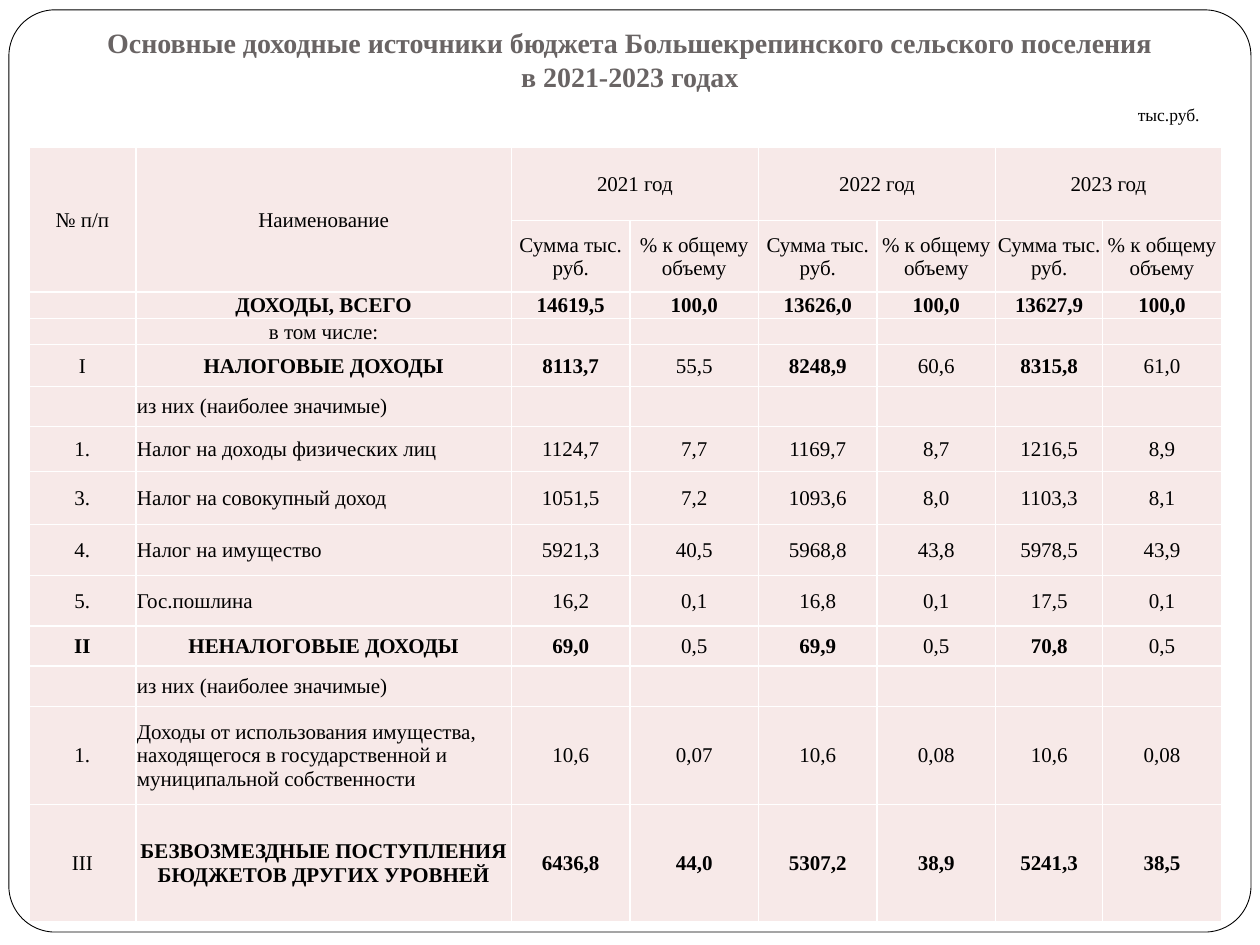
from lxml.etree import SubElement
from pptx import Presentation
from pptx.dml.color import RGBColor
from pptx.enum.shapes import MSO_SHAPE as SHAPE
from pptx.enum.text import MSO_ANCHOR as ANCHOR, MSO_AUTO_SIZE as AUTO, PP_ALIGN as ALIGN
from pptx.oxml.ns import qn
from pptx.util import Cm, Pt

COLORS = {"paper": "FFFFFF", "ink": "000000", "title": "696464", "cell": "F7E9E8"}
FONT = "Times New Roman"
C, L = ALIGN.CENTER, ALIGN.LEFT
YEARS = ["2021 год", "2022 год", "2023 год"]
COL_WIDTHS = [2.16, 7.57, 2.39, 2.59, 2.39, 2.39, 2.16, 2.39]
HEADER_HEIGHTS = [1.47, 1.45]
SUMS = {2, 4, 6}
SHARES = {3, 5, 7}

# height, name alignment, bold columns, cell texts
ROWS = [
    (0.48, C, {1} | SUMS | SHARES,
     ["", "ДОХОДЫ, ВСЕГО", "14619,5", "100,0", "13626,0", "100,0", "13627,9", "100,0"]),
    (0.48, C, set(), ["", "в том числе:"]),
    (0.84, C, {1} | SUMS,
     ["I", "НАЛОГОВЫЕ ДОХОДЫ", "8113,7", "55,5", "8248,9", "60,6", "8315,8", "61,0"]),
    (0.81, L, set(), ["", "из них (наиболее значимые)"]),
    (0.91, L, set(),
     ["1.", "Налог на доходы физических лиц", "1124,7", "7,7", "1169,7", "8,7", "1216,5", "8,9"]),
    (1.07, L, set(),
     ["3.", "Налог на совокупный доход", "1051,5", "7,2", "1093,6", "8,0", "1103,3", "8,1"]),
    (1.02, L, set(),
     ["4.", "Налог на имущество", "5921,3", "40,5", "5968,8", "43,8", "5978,5", "43,9"]),
    (1.02, L, set(), ["5.", "Гос.пошлина", "16,2", "0,1", "16,8", "0,1", "17,5", "0,1"]),
    (0.81, C, {0, 1} | SUMS,
     ["II", "НЕНАЛОГОВЫЕ ДОХОДЫ", "69,0", "0,5", "69,9", "0,5", "70,8", "0,5"]),
    (0.81, L, set(), ["", "из них (наиболее значимые)"]),
    (1.98, L, set(),
     ["1.", "Доходы от использования имущества, находящегося в государственной и "
      "муниципальной собственности", "10,6", "0,07", "10,6", "0,08", "10,6", "0,08"]),
    (2.36, C, {1} | SUMS | SHARES,
     ["III", "БЕЗВОЗМЕЗДНЫЕ ПОСТУПЛЕНИЯ БЮДЖЕТОВ ДРУГИХ УРОВНЕЙ",
      "6436,8", "44,0", "5307,2", "38,9", "5241,3", "38,5"]),
]


def rgb(name):
    return RGBColor.from_string(COLORS[name])


def write(tf, text, size=12, bold=False, color="ink", align=C):
    p = tf.paragraphs[0]
    p.alignment = align
    for i, line in enumerate(text.split("\n")):
        if i:
            p.add_line_break()
        if line:
            r = p.add_run()
            r.text = line
            r.font.name, r.font.size, r.font.bold = FONT, Pt(size), bold
            r.font.color.rgb = rgb(color)
    SubElement(p._p, qn("a:endParaRPr"), sz=str(size * 100))


def add_frame(s):
    sp = s.shapes.add_shape(SHAPE.ROUNDED_RECTANGLE, Cm(0.18), Cm(0.2), Cm(25.04), Cm(18.59))
    sp.adjustments[0] = 0.05
    sp.shadow.inherit = False
    sp.fill.solid()
    sp.fill.fore_color.rgb = rgb("paper")
    sp.line.color.rgb = rgb("ink")
    sp.line.width = Pt(0.5)
    s.shapes._spTree.insert(2, sp._element)


def add_title(s, text):
    sp = s.shapes.title
    sp.left, sp.top, sp.width, sp.height = Cm(1.19), Cm(0.79), Cm(23.01), Cm(1.98)
    tf = sp.text_frame
    tf.auto_size = AUTO.NONE
    tf.vertical_anchor = ANCHOR.BOTTOM
    tf.margin_top, tf.margin_bottom = 0, Cm(0.9)
    write(tf, text, size=16, bold=True, color="title")


def add_unit(s, text):
    tf = s.shapes.add_textbox(Cm(20.04), Cm(1.98), Cm(4.39), Cm(0.69)).text_frame
    tf.word_wrap = True
    write(tf, text, size=10, align=ALIGN.RIGHT)


def set_borders(cell):
    tc_pr = cell._tc.get_or_add_tcPr()
    for i, side in enumerate(("lnL", "lnR", "lnT", "lnB")):
        ln = SubElement(tc_pr, qn(f"a:{side}"), w=str(Pt(1)))
        fill = SubElement(ln, qn("a:solidFill"))
        SubElement(fill, qn("a:srgbClr"), val=COLORS["paper"])
        tc_pr.insert(i, ln)


def fill_cell(cell, text="", **fmt):
    cell.fill.solid()
    cell.fill.fore_color.rgb = rgb("cell")
    set_borders(cell)
    cell.vertical_anchor = ANCHOR.MIDDLE
    cell.margin_left = cell.margin_right = cell.margin_top = Cm(0.02)
    cell.margin_bottom = 0
    write(cell.text_frame, text, **fmt)


def add_income_table(s):
    heights = HEADER_HEIGHTS + [row[0] for row in ROWS]
    table = s.shapes.add_table(len(heights), len(COL_WIDTHS), Cm(0.58), Cm(2.97),
                               Cm(sum(COL_WIDTHS)), Cm(sum(heights))).table
    table.first_row = table.horz_banding = False
    for col, width in zip(table.columns, COL_WIDTHS):
        col.width = Cm(width)
    for row, height in zip(table.rows, heights):
        row.height = Cm(height)

    top = ["№ п/п", "Наименование"] + [t for year in YEARS for t in (year, "")]
    sub = ["", ""] + ["Сумма тыс. руб.", "% к общему объему"] * len(YEARS)
    for r, texts in enumerate((top, sub)):
        for c, text in enumerate(texts):
            fill_cell(table.cell(r, c), text)
    for c in (0, 1):
        table.cell(0, c).merge(table.cell(1, c))
    for c in sorted(SUMS):
        table.cell(0, c).merge(table.cell(0, c + 1))

    for r, (_, name_align, bold, texts) in enumerate(ROWS, len(HEADER_HEIGHTS)):
        for c in range(len(COL_WIDTHS)):
            fill_cell(table.cell(r, c), texts[c] if c < len(texts) else "",
                      bold=c in bold, align=name_align if c == 1 else C)


def main():
    prs = Presentation()
    prs.slide_width, prs.slide_height = Cm(25.4), Cm(19.05)
    s = prs.slides.add_slide(prs.slide_layouts[5])
    add_frame(s)
    add_title(s, "Основные доходные источники бюджета Большекрепинского сельского поселения\n"
                 "в 2021-2023 годах")
    add_unit(s, "тыс.руб.")
    add_income_table(s)
    prs.save("out.pptx")


if __name__ == "__main__":
    main()
